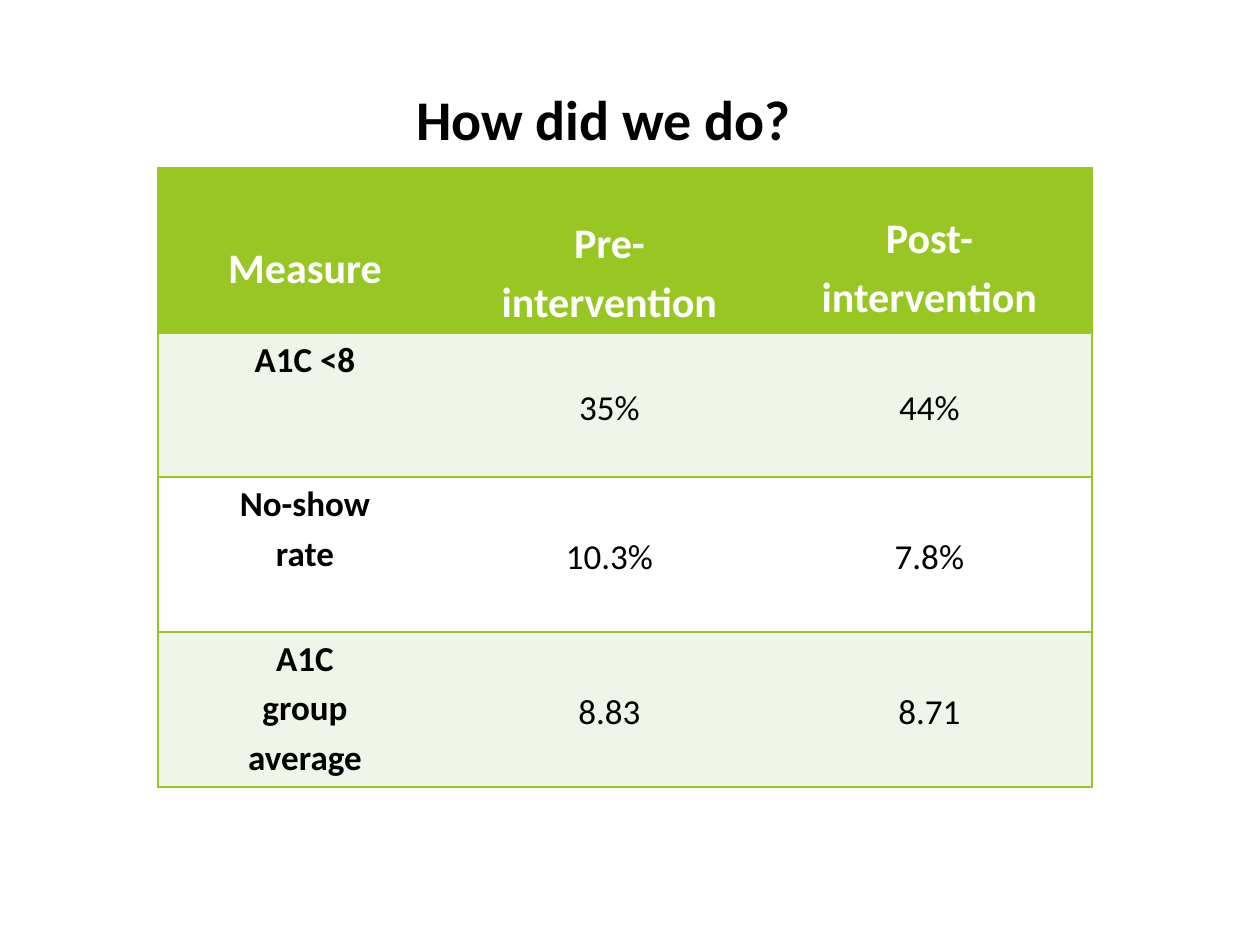
from lxml.etree import SubElement
from pptx import Presentation
from pptx.dml.color import RGBColor
from pptx.enum.text import MSO_ANCHOR as Anchor, PP_ALIGN as Align
from pptx.oxml.ns import qn
from pptx.util import Pt

PX = 914400 // 126
FONT = "Calibri"
COLORS = {"green": "98C723", "band": "EFF5E8", "white": "FFFFFF", "black": "000000"}
COLUMN_WIDTHS = [294, 315, 325]
ROW_HEIGHTS = [165, 144, 155, 155]
HEADER_TOPS = [29, 39, 29]
MEASURES = [
    ["Measure", "Pre-\nintervention", "Post-\nintervention"],
    ["A1C <8", "35%", "44%"],
    ["No-show\nrate", "10.3%", "7.8%"],
    ["A1C\ngroup\naverage", "8.83", "8.71"],
]


def px(length):
    return length * PX


def rgb(name):
    return RGBColor.from_string(COLORS[name])


def write(frame, text, size, color, bold, spacing=None):
    frame.text = text
    for paragraph in frame.paragraphs:
        paragraph.alignment = Align.CENTER
        paragraph.line_spacing = spacing
        for run in paragraph.runs:
            run.font.name = FONT
            run.font.size = Pt(size)
            run.font.bold = bold
            run.font.color.rgb = rgb(color)


def set_borders(cell, sides):
    properties = cell._tc.get_or_add_tcPr()
    for position, side in enumerate("LRTB"):
        line = properties.makeelement(qn(f"a:ln{side}"), {"w": str(Pt(1))})
        properties.insert(position, line)
        if side in sides:
            fill = SubElement(line, qn("a:solidFill"))
            SubElement(fill, qn("a:srgbClr"), val=COLORS["green"])
        else:
            SubElement(line, qn("a:noFill"))


def add_title(slide, text):
    title = slide.shapes.add_textbox(px(63), px(38), px(1081), px(120))
    frame = title.text_frame
    frame.word_wrap = True
    frame.vertical_anchor = Anchor.BOTTOM
    write(frame, text, 32, "black", True)


def format_cell(cell, text, row, column):
    header = row == 0
    label = column == 0
    cell.margin_left = cell.margin_right = px(9)
    cell.margin_top = px(HEADER_TOPS[column] if header else 0)
    cell.margin_bottom = 0
    cell.vertical_anchor = Anchor.TOP if label and not header else Anchor.MIDDLE
    cell.fill.solid()
    cell.fill.fore_color.rgb = rgb("green" if header else "band" if row % 2 else "white")
    write(cell.text_frame, text, 24 if header else 20,
          "white" if header else "black", header or label, 1.15)
    set_borders(cell, ["LTB", "TB", "RTB"][column])


def add_measures(slide):
    frame = slide.shapes.add_table(
        len(MEASURES), len(COLUMN_WIDTHS), px(158), px(168),
        px(sum(COLUMN_WIDTHS)), px(sum(ROW_HEIGHTS)))
    table = frame.table
    table.horz_banding = False
    for column, width in zip(table.columns, COLUMN_WIDTHS):
        column.width = px(width)
    for row, height in zip(table.rows, ROW_HEIGHTS):
        row.height = px(height)
    for row, texts in enumerate(MEASURES):
        for column, text in enumerate(texts):
            format_cell(table.cell(row, column), text, row, column)


def main():
    deck = Presentation()
    deck.slide_width, deck.slide_height = px(1260), px(945)
    slide = deck.slides.add_slide(deck.slide_layouts[6])
    add_title(slide, "How did we do?")
    add_measures(slide)
    deck.save("out.pptx")


if __name__ == "__main__":
    main()
